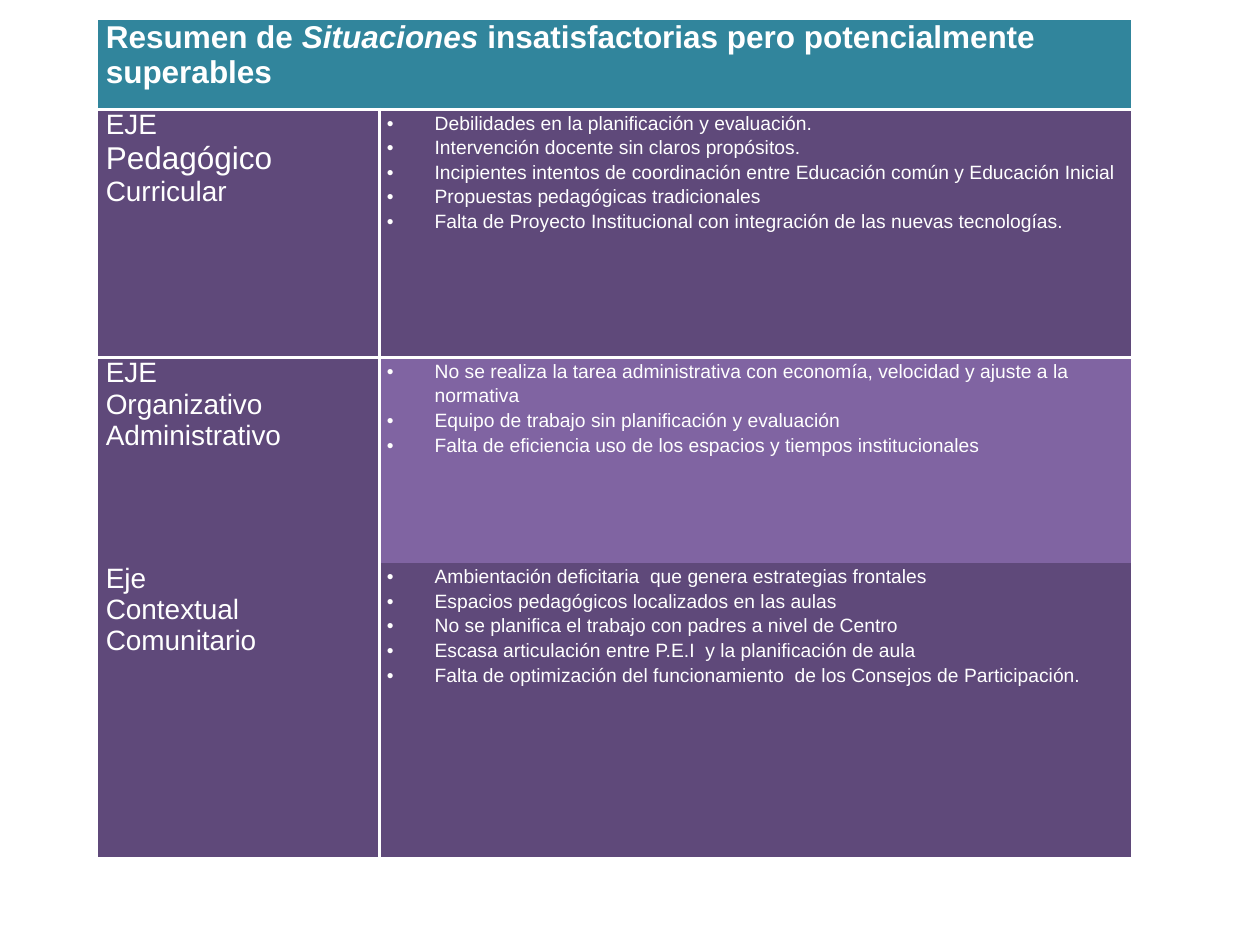
from dataclasses import dataclass

from lxml.etree import SubElement as Sub
from pptx import Presentation
from pptx.dml.color import RGBColor as RGB
from pptx.oxml.ns import qn
from pptx.util import Inches, Pt


@dataclass(frozen=True)
class Theme:
    font: str = "Arial"
    white: str = "FFFFFF"
    teal: str = "31859C"
    dark: str = "5F497A"
    light: str = "8064A2"
    title: int = 18
    axis: int = 16
    item: int = 11
    rule: float = 2.25


theme = Theme()


def dress(cell, color, sides):
    """Set margins, white rules on the given sides (L, R, T, B order) and fill."""
    cell.margin_left = cell.margin_right = Inches(0.06)
    cell.margin_top = cell.margin_bottom = 0
    props = cell._tc.get_or_add_tcPr()
    for side in sides:
        line = Sub(props, qn(f"a:ln{side}"), w=str(Pt(theme.rule)))
        Sub(Sub(line, qn("a:solidFill")), qn("a:srgbClr"), val=theme.white)
    cell.fill.solid()
    cell.fill.fore_color.rgb = RGB.from_string(color)


def write(cell, lines, size, bullet=False):
    """Fill a cell with one paragraph per line."""
    cell.text = "\n".join(lines)
    for para in cell.text_frame.paragraphs:
        para.font.name = theme.font
        para.font.size = Pt(size)
        para.font.bold = False
        para.font.color.rgb = RGB.from_string(theme.white)
        if bullet:
            para.line_spacing = 1.15
            props = para._p.get_or_add_pPr()
            props.set("marL", str(Inches(0.38)))
            props.set("indent", str(-Inches(0.38)))
            Sub(props, qn("a:buFont"), typeface=theme.font)
            Sub(props, qn("a:buChar"), char="•")


rows = [
    (["EJE", "Pedagógico", "Curricular"], theme.dark, [
        "Debilidades en la planificación y evaluación.",
        "Intervención docente sin claros propósitos.",
        "Incipientes intentos de coordinación entre Educación común y Educación Inicial",
        "Propuestas pedagógicas tradicionales",
        "Falta de Proyecto Institucional con integración de las nuevas tecnologías.",
    ]),
    (["EJE", "Organizativo", "Administrativo"], theme.light, [
        "No se realiza la tarea administrativa con economía, velocidad y ajuste a la normativa",
        "Equipo de trabajo sin planificación y evaluación",
        "Falta de eficiencia uso de los espacios y tiempos institucionales",
    ]),
    (["Eje", "Contextual", "Comunitario"], theme.dark, [
        "Ambientación deficitaria  que genera estrategias frontales",
        "Espacios pedagógicos localizados en las aulas",
        "No se planifica el trabajo con padres a nivel de Centro",
        "Escasa articulación entre P.E.I  y la planificación de aula",
        "Falta de optimización del funcionamiento  de los Consejos de Participación.",
    ]),
]
widths = [2.23, 5.97]
heights = [0.71, 1.97, 1.63, 2.33]

# Slide
deck = Presentation()
deck.slide_width, deck.slide_height = Inches(10), Inches(7.5)
slide = deck.slides.add_slide(deck.slide_layouts[6])

# Table without style or grid
table = slide.shapes.add_table(
    len(heights), len(widths), Inches(0.78), Inches(0.16),
    Inches(sum(widths)), Inches(sum(heights))).table
table.first_row = table.horz_banding = False
style = table._tbl.tblPr.find(qn("a:tableStyleId"))
style.text = "{2D5ABB26-0587-4C30-8999-92F81FD0307C}"
for col, width in zip(table.columns, widths):
    col.width = Inches(width)
for row, height in zip(table.rows, heights):
    row.height = Inches(height)

# Heading across both columns
head = table.cell(0, 0)
head.merge(table.cell(0, 1))
for col in range(2):
    dress(table.cell(0, col), theme.teal, "B")
write(head, [""], theme.title)
para = head.text_frame.paragraphs[0]
para.font.bold = True
for text in ("Resumen de ", "Situaciones", " insatisfactorias pero potencialmente superables"):
    run = para.add_run()
    run.text = text
    run.font.name = theme.font
    run.font.size = Pt(theme.title)
    run.font.bold = True
    run.font.italic = text == "Situaciones"
    run.font.color.rgb = RGB.from_string(theme.white)

# Axes on the left, their situations on the right
for num, (axis, color, items) in enumerate(rows, 1):
    name, body = table.cell(num, 0), table.cell(num, 1)
    top = "T" if num == 1 else ""
    dress(name, theme.dark, "R" + top)
    dress(body, color, "L" + top)
    write(name, axis, theme.axis)
    write(body, items, theme.item, bullet=True)
table.cell(1, 0).text_frame.paragraphs[1].font.size = Pt(theme.title)

deck.save("out.pptx")
